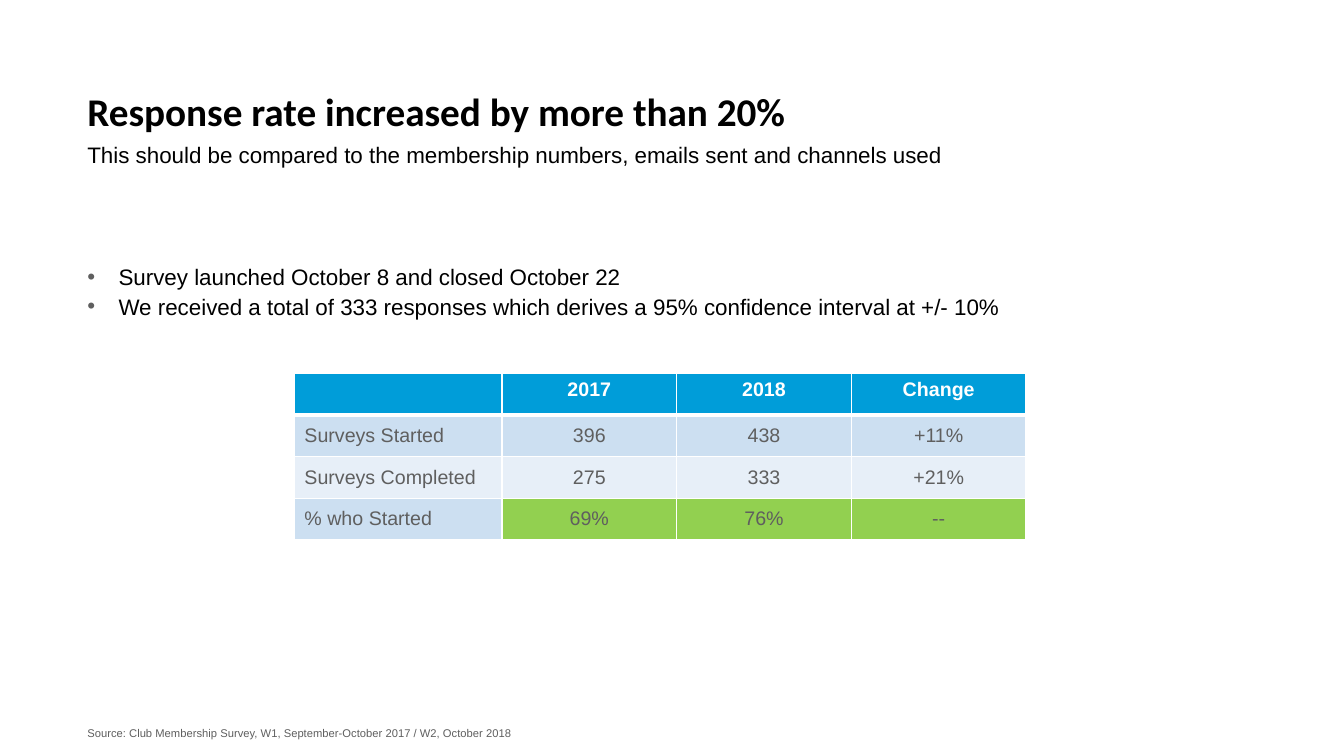
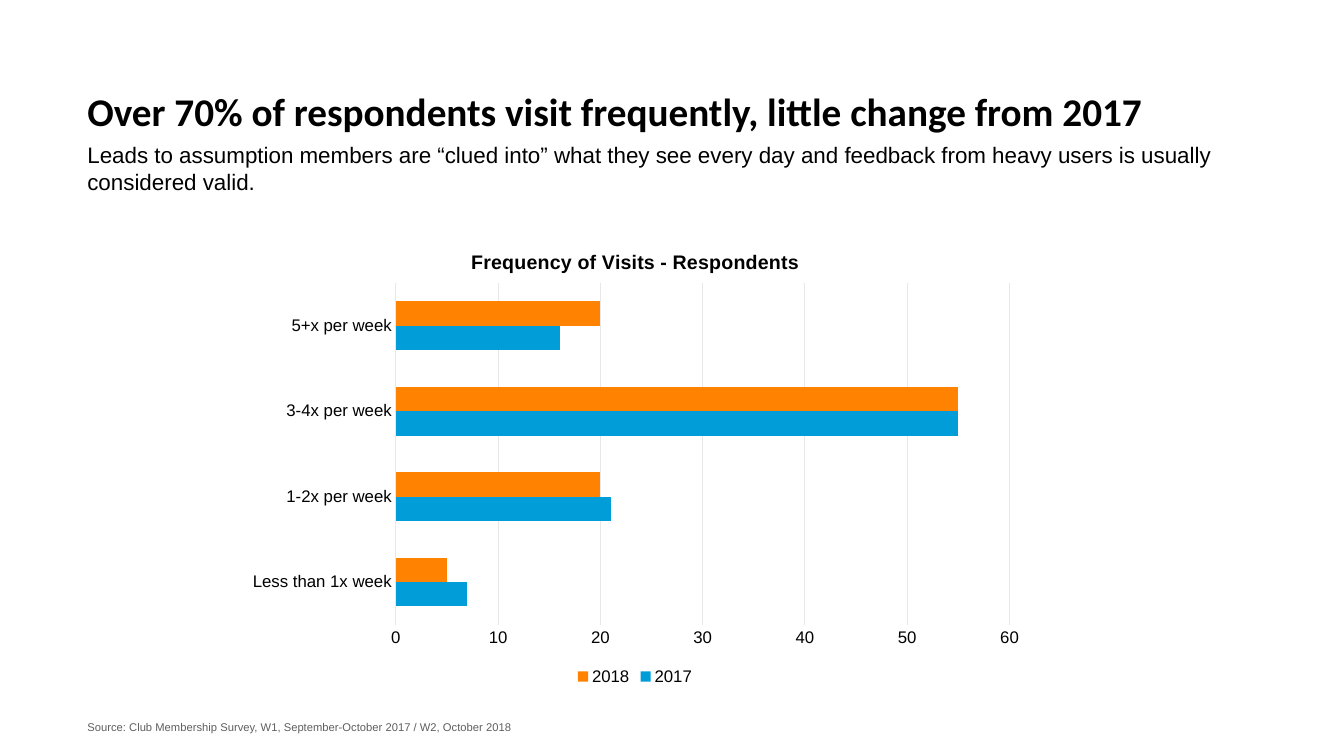
from lxml.etree import SubElement
from pptx import Presentation
from pptx.chart.data import CategoryChartData
from pptx.dml.color import RGBColor
from pptx.enum.chart import XL_CHART_TYPE, XL_LEGEND_POSITION, XL_TICK_MARK
from pptx.enum.text import MSO_ANCHOR, PP_ALIGN
from pptx.oxml import parse_xml
from pptx.oxml.ns import nsdecls, qn
from pptx.util import Inches, Pt

BLACK, WHITE, GRAY = "000000", "FFFFFF", "5F5F5F"
BLUE, ORANGE, GREEN = "009DD9", "FF8300", "92D050"
PALE, LIGHT, RULE = "CCDFF1", "E7EFF8", "E7E7E7"
SOURCE = "Source: Club Membership Survey, W1, September-October 2017 / W2, October 2018"

deck = Presentation()
deck.slide_width, deck.slide_height = Inches(13.33), Inches(7.5)
# Grid: 100 columns by 100 rows
COL, ROW = deck.slide_width / 100, deck.slide_height / 100


def tint(code):
    return RGBColor.from_string(code)


def write(par, text, size, hue=BLACK, bold=False, face="Arial"):
    run = par.add_run()
    run.text = text
    run.font.size, run.font.bold, run.font.name = Pt(size), bold, face
    run.font.color.rgb = tint(hue)


# Shared frame: title, subtitle, source, and bullets where there are any
pages = [
    ("Response rate increased by more than 20%",
     "This should be compared to the membership numbers, emails sent and channels used",
     96.1,
     ["Survey launched October 8 and closed October 22",
      "We received a total of 333 responses which derives a 95% confidence interval at +/- 10%"]),
    ("Over 70% of respondents visit frequently, little change from 2017",
     "Leads to assumption members are “clued into” what they see every day "
     "and feedback from heavy users is usually considered valid.",
     95.3, []),
]
slides = []
for title, lead, foot, points in pages:
    slide = deck.slides.add_slide(deck.slide_layouts[6])
    slides.append(slide)
    parts = [
        ("title", [title], 11.1, 6.6, (28, BLACK, True, "Calibri")),
        ("lead", [lead], 18.7, 7.2, (16,)),
        ("points", points, 34.8, 7.4, (16,)),
        ("source", [SOURCE], foot, 2, (8, GRAY)),
    ]
    for role, lines, top, high, style in parts:
        if not lines:
            continue
        box = slide.shapes.add_textbox(
            round(6.5 * COL), round(top * ROW), round(88.6 * COL), round(high * ROW))
        frame = box.text_frame
        frame.word_wrap = True
        frame.margin_left = frame.margin_right = 0
        frame.margin_top = frame.margin_bottom = 0
        for num, line in enumerate(lines):
            par = frame.add_paragraph() if num else frame.paragraphs[0]
            write(par, line, *style)
            if role == "title":
                frame.vertical_anchor = MSO_ANCHOR.BOTTOM
                par.line_spacing = 0.8
            elif role == "points":
                par.space_before = Pt(2 * num)
                props = par._p.get_or_add_pPr()
                props.set("marL", str(Inches(0.31)))
                props.set("indent", str(-Inches(0.31)))
                ink = SubElement(props, qn("a:buClr"))
                SubElement(ink, qn("a:srgbClr")).set("val", GRAY)
                SubElement(props, qn("a:buFont")).set("typeface", "Arial")
                SubElement(props, qn("a:buChar")).set("char", "•")

# Response table
rows = [
    ("", "2017", "2018", "Change"),
    ("Surveys Started", "396", "438", "+11%"),
    ("Surveys Completed", "275", "333", "+21%"),
    ("% who Started", "69%", "76%", "--"),
]
fills = [BLUE, PALE, LIGHT, PALE]
wide = [15.45, 13, 13, 13]
table = slides[0].shapes.add_table(
    len(rows), len(wide), round(21.9 * COL), round(49.4 * ROW),
    round(sum(wide) * COL), round(22 * ROW)).table
for column, share in zip(table.columns, wide):
    column.width = round(share * COL)
for r, row in enumerate(rows):
    for c, text in enumerate(row):
        cell = table.cell(r, c)
        par = cell.text_frame.paragraphs[0]
        if text:
            write(par, text, 14, GRAY if r else WHITE, r == 0)
        if c:
            par.alignment = PP_ALIGN.CENTER
        if r:
            cell.vertical_anchor = MSO_ANCHOR.MIDDLE
        cell.fill.solid()
        cell.fill.fore_color.rgb = tint(GREEN if r == 3 and c else fills[r])
        # White borders, thick below the header
        for num, side in enumerate("LRTB"):
            thick = (r, side) in ((0, "B"), (1, "T"))
            edge = parse_xml(
                f'<a:ln{side} {nsdecls("a")} w="{Pt(3 if thick else 1)}"><a:solidFill>'
                f'<a:srgbClr val="{WHITE}"/></a:solidFill></a:ln{side}>')
            cell._tc.get_or_add_tcPr().insert(num, edge)

# Visits chart
data = CategoryChartData()
data.categories = ["Less than 1x week", "1-2x per week", "3-4x per week", "5+x per week"]
data.add_series("2017", (7, 21, 55, 16))
data.add_series("2018", (5, 20, 55, 20))
chart = slides[1].shapes.add_chart(
    XL_CHART_TYPE.BAR_CLUSTERED, round(17.6 * COL), round(30.1 * ROW),
    round(59.3 * COL), round(61.1 * ROW), data).chart
chart.font.name, chart.font.size = "Arial", Pt(12)
chart.font.color.rgb = tint(BLACK)
chart.has_title = True
write(chart.chart_title.text_frame.paragraphs[0],
      "Frequency of Visits - Respondents", 14, BLACK, True)
chart.has_legend = True
chart.legend.position = XL_LEGEND_POSITION.BOTTOM
chart.legend.include_in_layout = False

# Bars and axes
plot = chart.plots[0]
plot.gap_width, plot.overlap, plot.vary_by_categories = 150, 0, False
for series, hue in zip(plot.series, (BLUE, ORANGE)):
    series.format.fill.solid()
    series.format.fill.fore_color.rgb = tint(hue)
for axis in (chart.category_axis, chart.value_axis):
    axis.major_tick_mark = axis.minor_tick_mark = XL_TICK_MARK.NONE
    axis.format.line.fill.background()
    axis.tick_labels.font.size = Pt(12)
scale = chart.value_axis
scale.minimum_scale, scale.maximum_scale, scale.major_unit = 0, 60, 10
scale.has_major_gridlines = True
scale.major_gridlines.format.line.color.rgb = tint(RULE)
scale.major_gridlines.format.line.width = Pt(0.75)

# Places of the title and plot, as shares of the chart
spots = [
    ("title", 1, {"x": 0.29, "y": 0.04}),
    ("plotArea", 0, {"x": 0.2, "y": 0.12, "w": 0.77, "h": 0.74}),
]
for name, order, shares in spots:
    part = chart.element.find(f".//{qn('c:' + name)}")
    for old in part.findall(qn("c:layout")):
        part.remove(old)
    layout = parse_xml(f'<c:layout {nsdecls("c")}><c:manualLayout/></c:layout>')
    part.insert(order, layout)
    marks = {"layoutTarget": "inner"} if "w" in shares else {}
    marks.update(xMode="edge", yMode="edge", **shares)
    for key, val in marks.items():
        SubElement(layout[0], qn("c:" + key)).set("val", str(val))

deck.save("out.pptx")
